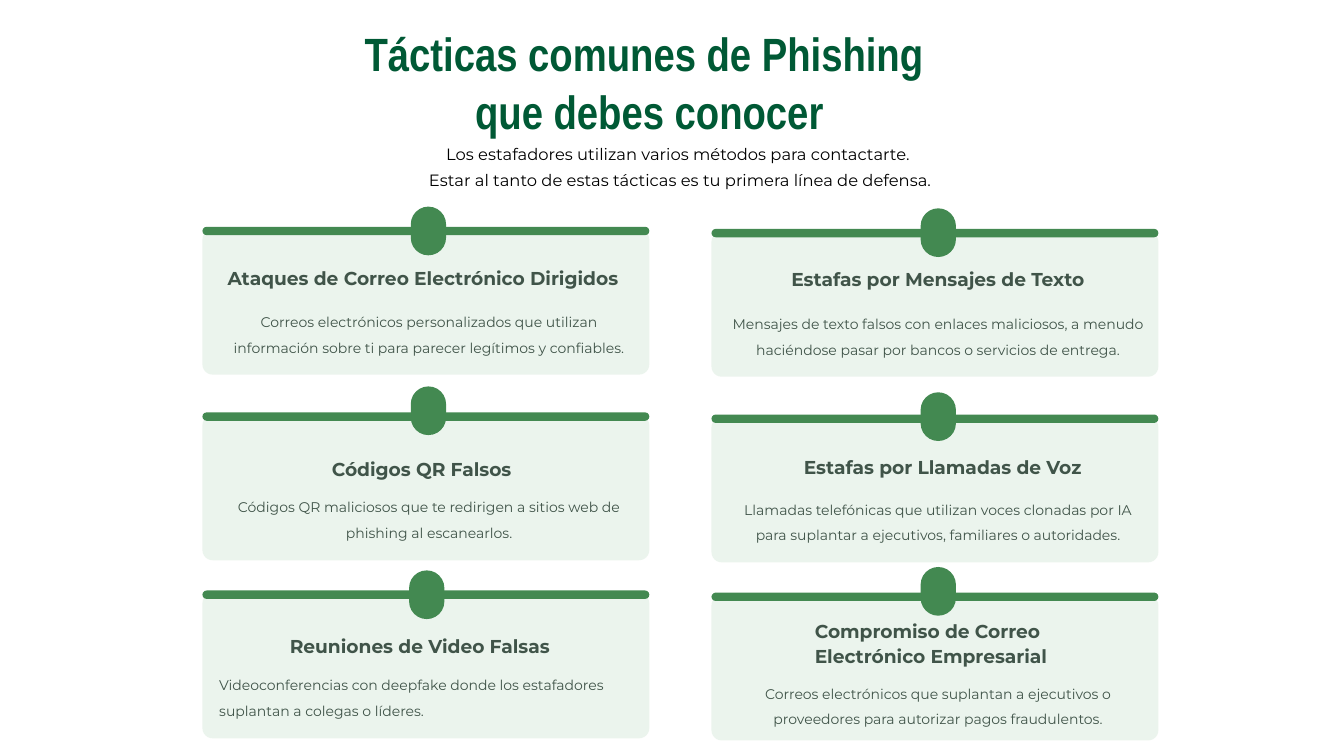
"""Build the slide on common phishing tactics: six cards in two columns."""
from dataclasses import dataclass

from lxml import etree
from pptx import Presentation
from pptx.dml.color import RGBColor
from pptx.enum.shapes import MSO_SHAPE
from pptx.enum.text import MSO_ANCHOR, MSO_AUTO_SIZE, PP_ALIGN
from pptx.oxml.ns import qn
from pptx.util import Inches, Pt

ROUNDED = MSO_SHAPE.ROUNDED_RECTANGLE
TOP = MSO_ANCHOR.TOP
NO_AUTOFIT = MSO_AUTO_SIZE.NONE
LEFT, CENTER = PP_ALIGN.LEFT, PP_ALIGN.CENTER

TITLE = ["Tácticas comunes de Phishing ", "que debes conocer"]
SUBTITLE = [
    "Los estafadores utilizan varios métodos para contactarte. ",
    "Estar al tanto de estas tácticas es tu primera línea de defensa.",
]


@dataclass(frozen=True)
class TextStyle:
    """Font and line spacing of one kind of text."""
    font: str
    size: float
    color: str
    spacing: float
    bold: bool = False


@dataclass(frozen=True)
class Theme:
    """Colours and type styles of the slide."""
    accent: str = "438951"
    panel: str = "DFEEE2"
    panel_opacity: int = 60
    title: TextStyle = TextStyle("Arial Narrow", 40, "005935", 49.5, True)
    subtitle: TextStyle = TextStyle("Montserrat", 14, "000000", 22)
    heading: TextStyle = TextStyle("Montserrat", 16, "405449", 21.5, True)
    body: TextStyle = TextStyle("Montserrat", 12, "405449", 22)


@dataclass(frozen=True)
class Card:
    """Wording of one card and the places that vary from card to card."""
    heading: list
    body: str
    heading_at: tuple
    badge_at: tuple
    body_top: float
    body_align: PP_ALIGN = CENTER


CARD_ROWS = [
    (
        Card(["Ataques de Correo Electrónico Dirigidos"],
             "Correos electrónicos personalizados que utilizan información "
             "sobre ti para parecer legítimos y confiables.",
             (2.71, 3.14), (4.89, 2.46), 3.63),
        Card(["Estafas por Mensajes de Texto"],
             "Mensajes de texto falsos con enlaces maliciosos, a menudo "
             "haciéndose pasar por bancos o servicios de entrega.",
             (9.42, 3.16), (10.96, 2.48), 3.65),
    ),
    (
        Card(["Códigos QR Falsos"],
             "Códigos QR maliciosos que te redirigen a sitios web de "
             "phishing al escanearlos.",
             (3.95, 5.42), (4.89, 4.6), 5.83),
        Card(["Estafas por Llamadas de Voz"],
             "Llamadas telefónicas que utilizan voces clonadas por IA para "
             "suplantar a ejecutivos, familiares o autoridades.",
             (9.57, 5.4), (10.96, 4.67), 5.86),
    ),
    (
        Card(["Reuniones de Video Falsas"],
             "Videoconferencias con deepfake donde los estafadores "
             "suplantan a colegas o líderes.",
             (3.45, 7.53), (4.87, 6.79), 7.95, LEFT),
        Card(["Compromiso de Correo", "Electrónico Empresarial"],
             "Correos electrónicos que suplantan a ejecutivos o proveedores "
             "para autorizar pagos fraudulentos.",
             (9.7, 7.35), (10.96, 6.75), 8.05),
    ),
]

COLUMN_LEFTS = (2.41, 8.47)
COLUMN_DROP = 0.025
BAR_TOPS = (2.7, 4.91, 7.03)
CARD_WIDTH, PANEL_HEIGHT, BAR_HEIGHT = 5.32, 1.73, 0.1
PANEL_OFFSET, BODY_INSET = 0.03, 0.2
BADGE_WIDTH, BADGE_HEIGHT = 0.42, 0.58
HEADING_WIDTH, BODY_WIDTH = 4.9, 5


def write_text(shape, lines, style, alignment):
    """Fill a shape with one paragraph per line in the given style."""
    frame = shape.text_frame
    frame.margin_left = frame.margin_top = 0
    frame.margin_right = frame.margin_bottom = 0
    frame.auto_size = NO_AUTOFIT
    frame.word_wrap = True
    frame.vertical_anchor = TOP
    frame.text = "\n".join(lines)
    for paragraph in frame.paragraphs:
        paragraph.alignment = alignment
        paragraph.line_spacing = Pt(style.spacing)
        paragraph.font.name = style.font
        paragraph.font.size = Pt(style.size)
        paragraph.font.bold = style.bold
        paragraph.font.color.rgb = RGBColor.from_string(style.color)


def add_text(slide, box, lines, style, alignment):
    """Add a text box at box (left, top, width, height)."""
    shape = slide.shapes.add_textbox(*map(Inches, box))
    write_text(shape, lines, style, alignment)


def add_rounded(slide, box, color, rounding=0.5, opacity=100):
    """Add a plain rounded rectangle."""
    shape = slide.shapes.add_shape(ROUNDED, *map(Inches, box))
    shape.adjustments[0] = rounding
    shape.shadow.inherit = False
    shape.line.fill.background()
    shape.fill.solid()
    shape.fill.fore_color.rgb = RGBColor.from_string(color)
    if opacity < 100:
        color_element = shape.fill._xPr.find(f".//{qn('a:srgbClr')}")
        alpha = etree.SubElement(color_element, qn("a:alpha"))
        alpha.set("val", str(opacity * 1000))


def add_card(slide, card, left, bar_top, theme):
    """Add the panel, bar, badge and texts of one card."""
    panel = (left, bar_top + PANEL_OFFSET, CARD_WIDTH, PANEL_HEIGHT)
    add_rounded(slide, panel, theme.panel, 0.07, theme.panel_opacity)
    add_rounded(slide, (left, bar_top, CARD_WIDTH, BAR_HEIGHT), theme.accent)
    add_rounded(slide, (*card.badge_at, BADGE_WIDTH, BADGE_HEIGHT), theme.accent)
    add_text(slide, (*card.heading_at, HEADING_WIDTH, 0.3 * len(card.heading)),
             card.heading, theme.heading, LEFT)
    add_text(slide, (left + BODY_INSET, card.body_top, BODY_WIDTH, 0.61),
             [card.body], theme.body, card.body_align)


def main():
    """Create and save the presentation."""
    theme = Theme()
    presentation = Presentation()
    presentation.slide_width, presentation.slide_height = Inches(16), Inches(9)
    slide = presentation.slides.add_slide(presentation.slide_layouts[5])

    title = slide.shapes.title
    title.left, title.top = Inches(2.53), Inches(0.28)
    title.width, title.height = Inches(10.4), Inches(1.37)
    write_text(title, TITLE, theme.title, CENTER)
    add_text(slide, (2.41, 1.65, 11.38, 0.61), SUBTITLE, theme.subtitle, CENTER)

    for bar_top, cards in zip(BAR_TOPS, CARD_ROWS):
        for column, (left, card) in enumerate(zip(COLUMN_LEFTS, cards)):
            add_card(slide, card, left, bar_top + column * COLUMN_DROP, theme)

    presentation.save("out.pptx")


if __name__ == "__main__":
    main()
